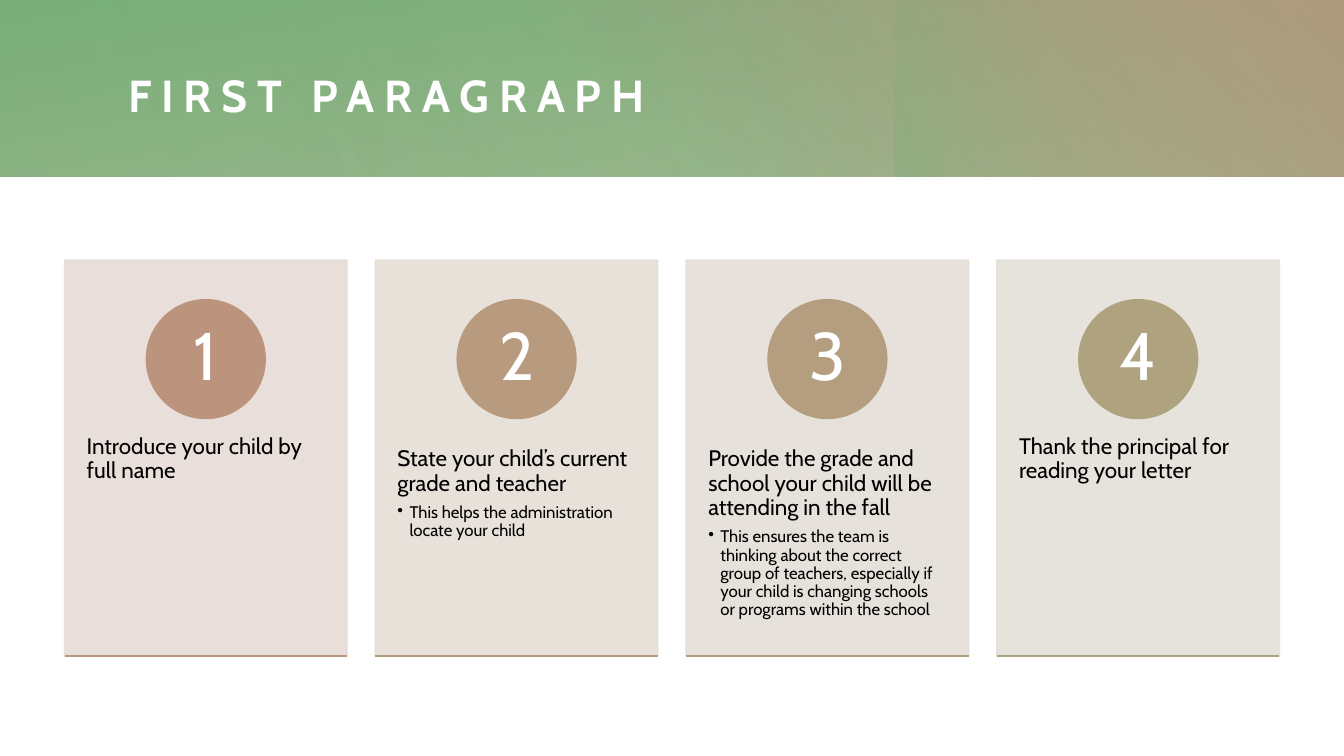
from lxml.etree import SubElement
from pptx import Presentation
from pptx.dml.color import RGBColor
from pptx.enum.shapes import MSO_CONNECTOR, MSO_SHAPE
from pptx.enum.text import MSO_ANCHOR, PP_ALIGN
from pptx.oxml.ns import qn
from pptx.util import Inches, Pt

THEME = {
    "font": "Cabin",
    "title_size": 32, "number_size": 48, "heading_size": 16, "detail_size": 12,
    "white": "FFFFFF", "ink": "000000",
    "sage": "90AC7F", "green": "75B178", "clay": "BC947D", "olive": "9DA970",
    "cards": ["E7DCD7", "E6DED7", "E4DFD8", "E3E0D8"],
    "circles": ["BC947D", "B89A7E", "B49E7F", "AFA27F"],
    "rules": ["BA977D", "B69C7E", "B1A07F", "ADA380"],
}
WIDTH, HEIGHT = 13.33, 7.5
BAND = 1.75

presentation = Presentation()
presentation.slide_width, presentation.slide_height = Inches(WIDTH), Inches(HEIGHT)
slide = presentation.slides.add_slide(presentation.slide_layouts[6])
shapes = slide.shapes


def add_block(kind, place, color):
    block = shapes.add_shape(kind, *map(Inches, place))
    block.shadow.inherit = False
    block.fill.solid()
    block.fill.fore_color.rgb = RGBColor.from_string(color)
    block.line.color.rgb = RGBColor.from_string(color)
    block.line.width = Pt(1)
    return block


def style(paragraph, size, color, bold=False):
    font = paragraph.font
    font.name, font.size, font.bold = THEME["font"], Pt(size), bold
    font.color.rgb = RGBColor.from_string(color)


# Header band: (place, rotation, angle, stops of position, colour, opacity)
sage, green, clay, olive = (THEME[name] for name in ("sage", "green", "clay", "olive"))
washes = [
    ((0, 0, WIDTH, BAND), 0, 260, [(0, sage, 83), (100, green, 100)]),
    ((4.81, 0, WIDTH - 4.81, BAND), 0, 310, [(22, clay, 0), (99, clay, 100)]),
    ((9.87, -0.99, BAND, 3.74), 270, 250, [(45, olive, 0), (99, green, 33)]),
    ((2.68, 0, WIDTH - 2.68, BAND), 180, 330, [(0, sage, 30), (99, sage, 0)]),
    ((0, 0, 8.65, BAND), 0, 340, [(0, sage, 21), (99, sage, 0)]),
]
for place, rotation, angle, stops in washes:
    wash = add_block(MSO_SHAPE.RECTANGLE, place, sage)
    wash.line.fill.background()
    wash.rotation = rotation
    wash.fill.gradient()
    gradient = wash._element.spPr.find(qn("a:gradFill"))
    gradient.set("rotWithShape", "1")
    gradient.find(qn("a:lin")).set("ang", str(angle * 60000))
    stop_list = gradient.find(qn("a:gsLst"))
    stop_list.clear()
    for position, color, opacity in stops:
        stop = SubElement(stop_list, qn("a:gs"), pos=str(position * 1000))
        tint = SubElement(stop, qn("a:srgbClr"), val=color)
        SubElement(tint, qn("a:alpha"), val=str(opacity * 1000))

title = shapes.add_textbox(*map(Inches, (1.27, 0.41, 11.35, 1.06))).text_frame
title.word_wrap = True
title.vertical_anchor = MSO_ANCHOR.MIDDLE
title.margin_left = title.margin_right = title.margin_top = title.margin_bottom = 0
title.text = "FIRST PARAGRAPH"
style(title.paragraphs[0], THEME["title_size"], THEME["white"], bold=True)
title.paragraphs[0].runs[0]._r.get_or_add_rPr().set("spc", "700")

# Four cards, separated by gaps of a tenth of a card
steps = [
    ("Introduce your child by full name", None),
    ("State your child’s current grade and teacher",
     "This helps the administration locate your child"),
    ("Provide the grade and school your child will be attending in the fall",
     "This ensures the team is thinking about the correct group of teachers, "
     "especially if your child is changing schools or programs within the school"),
    ("Thank the principal for reading your letter", None),
]
MARGIN, CARD_TOP, CARD_HEIGHT = 0.64, 2.58, 3.93
CARD_WIDTH = (WIDTH - 2 * MARGIN) / 4.3
PITCH = 1.1 * CARD_WIDTH
CIRCLE = 0.3 * CARD_HEIGHT
CARD_BOTTOM = CARD_TOP + CARD_HEIGHT

for index, (heading, detail) in enumerate(steps):
    left = MARGIN + index * PITCH
    card = add_block(MSO_SHAPE.RECTANGLE, (left, CARD_TOP, CARD_WIDTH, CARD_HEIGHT),
                     THEME["cards"][index])
    for tint in card._element.spPr.iter(qn("a:srgbClr")):
        SubElement(tint, qn("a:alpha"), val="90000")

    message = shapes.add_textbox(
        *map(Inches, (left, 4.08, CARD_WIDTH, 0.6 * CARD_HEIGHT))).text_frame
    message.word_wrap = True
    message.margin_left = message.margin_right = Inches(0.22)
    message.margin_top = message.margin_bottom = Inches(0.36)
    message.text = heading
    lead = message.paragraphs[0]
    lead.line_spacing, lead.space_after = 0.9, Pt(6)
    style(lead, THEME["heading_size"], THEME["ink"])
    if detail:
        bullet = message.add_paragraph()
        bullet.text = detail
        bullet.level = 1
        bullet.line_spacing, bullet.space_after = 0.9, Pt(2)
        properties = bullet._p.get_or_add_pPr()
        properties.set("marL", str(Inches(0.12)))
        properties.set("indent", str(Inches(-0.12)))
        SubElement(properties, qn("a:buChar"), char="•")
        style(bullet, THEME["detail_size"], THEME["ink"])

    circle = add_block(MSO_SHAPE.OVAL,
                       (left + (CARD_WIDTH - CIRCLE) / 2, CARD_TOP + CIRCLE / 3, CIRCLE, CIRCLE),
                       THEME["circles"][index])
    number = circle.text_frame
    number.vertical_anchor = MSO_ANCHOR.MIDDLE
    number.margin_left = number.margin_right = Inches(0.09)
    number.margin_top = number.margin_bottom = Inches(0.01)
    number.text = str(index + 1)
    digit = number.paragraphs[0]
    digit.alignment, digit.line_spacing = PP_ALIGN.CENTER, 0.9
    style(digit, THEME["number_size"], THEME["white"])

    rule = shapes.add_connector(MSO_CONNECTOR.STRAIGHT, *map(
        Inches, (left, CARD_BOTTOM, left + CARD_WIDTH, CARD_BOTTOM)))
    rule.line.color.rgb = RGBColor.from_string(THEME["rules"][index])
    rule.line.width = Pt(1)
    SubElement(rule._element.spPr, qn("a:effectLst"))

presentation.save("out.pptx")
